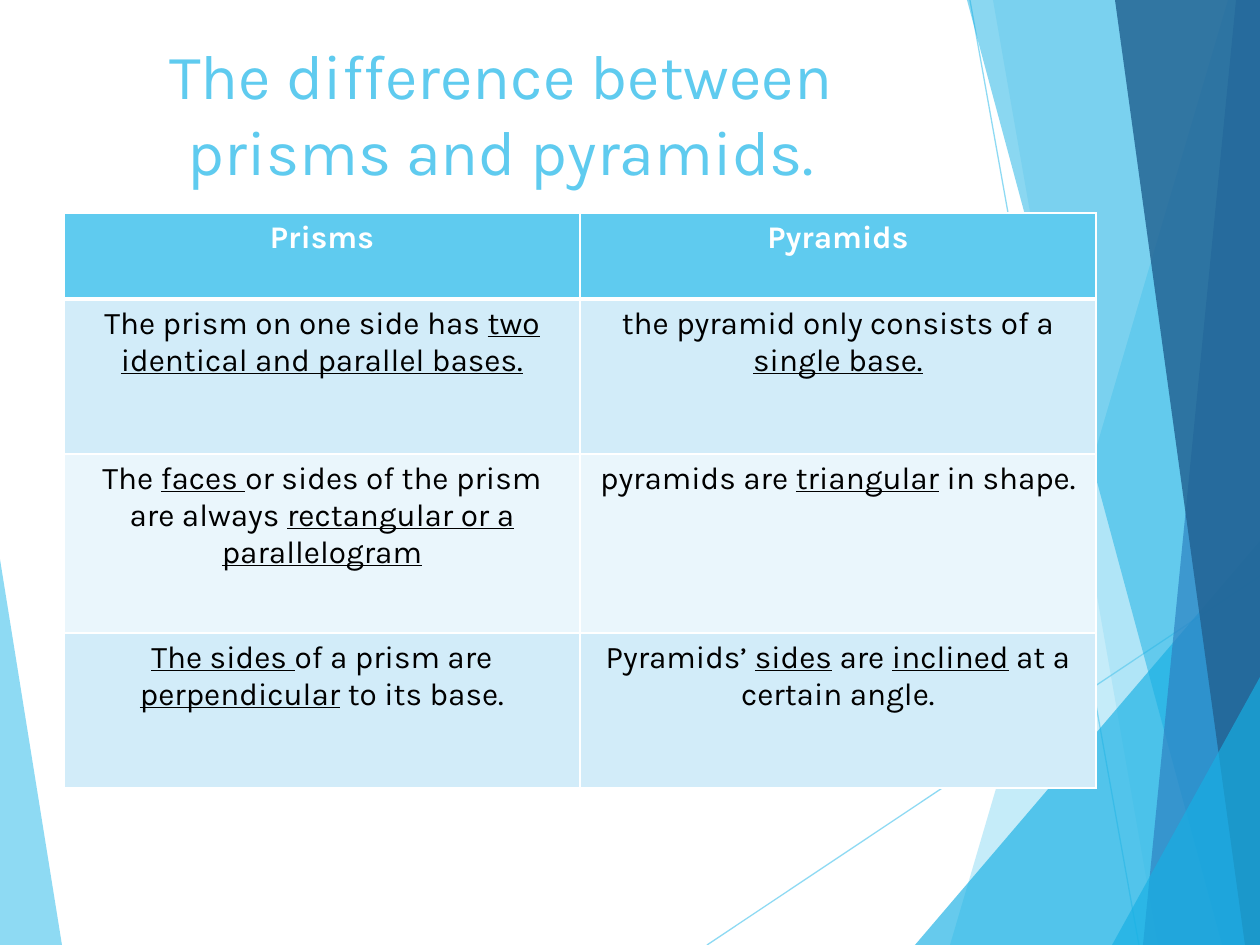
from lxml.etree import SubElement
from pptx import Presentation
from pptx.dml.color import RGBColor
from pptx.enum.shapes import MSO_CONNECTOR
from pptx.enum.text import MSO_ANCHOR, PP_ALIGN
from pptx.oxml.ns import qn
from pptx.util import Pt

SCALE = 914400 / 126
WIDTH, HEIGHT = 1260, 945
COLORS = {
    "sky": "5FCBEF",
    "cyan": "17B0E4",
    "blue": "2E83C3",
    "navy": "226292",
    "band": "D2ECF9",
    "pale": "EAF6FC",
    "white": "FFFFFF",
    "black": "000000",
}

FACETS = [
    ("sky", 36, [(1228, 0), (950, 945), (1260, 945), (1260, 0)]),
    ("sky", 20, [(993, 0), (1158, 945), (1260, 945), (1260, 0)]),
    ("cyan", 66, [(915, 945), (1260, 541), (1260, 945)]),
    ("cyan", 50, [(967, 0), (1222, 945), (1260, 945), (1260, 0)]),
    ("blue", 70, [(1236, 0), (1143, 945), (1260, 945), (1260, 0)]),
    ("navy", 82, [(1115, 0), (1245, 945), (1260, 945), (1260, 0)]),
    ("cyan", 66, [(1112, 945), (1260, 677), (1260, 945)]),
]

HEADER = [[("Prisms", False)], [("Pyramids", False)]]
BODY = [
    [
        [("The prism on one side has ", False), ("two identical and parallel bases.", True)],
        [("the pyramid only consists of a ", False), ("single base.", True)],
    ],
    [
        [
            ("The ", False),
            ("faces ", True),
            ("or sides of the prism are always ", False),
            ("rectangular or a parallelogram", True),
        ],
        [("pyramids are ", False), ("triangular", True), (" in shape.", False)],
    ],
    [
        [
            ("The sides ", True),
            ("of a prism are ", False),
            ("perpendicular", True),
            (" to its base.", False),
        ],
        [
            ("Pyramids’ ", False),
            ("sides", True),
            (" are ", False),
            ("inclined", True),
            (" at a certain angle.", False),
        ],
    ],
]


def px(length):
    return round(length * SCALE)


class SlideBuilder:
    """Draws styled elements on the current slide."""

    font = "Karla"

    def __init__(self, slide):
        self.slide = slide

    def color(self, name):
        return RGBColor.from_string(COLORS[name])

    def set_alpha(self, properties, percent):
        color = next(properties.iter(qn("a:srgbClr")))
        SubElement(color, qn("a:alpha"), val=str(percent * 1000))

    def facet(self, color, opacity, points):
        builder = self.slide.shapes.build_freeform(*points[0], scale=SCALE)
        builder.add_line_segments(points[1:], close=True)
        shape = builder.convert_to_shape()
        shape.shadow.inherit = False
        shape.fill.solid()
        shape.fill.fore_color.rgb = self.color(color)
        shape.line.fill.background()
        self.set_alpha(shape._element.spPr, opacity)

    def line(self, start, end):
        ends = [px(length) for length in (*start, *end)]
        connector = self.slide.shapes.add_connector(MSO_CONNECTOR.STRAIGHT, *ends)
        connector.line.color.rgb = self.color("sky")
        connector.line.width = Pt(0.75)
        properties = connector._element.spPr
        self.set_alpha(properties, 70)
        SubElement(properties, qn("a:effectLst"))

    def add_runs(self, paragraph, runs, size, color, bold=False):
        paragraph.alignment = PP_ALIGN.CENTER
        for text, underline in runs:
            run = paragraph.add_run()
            run.text = text
            run.font.name = self.font
            run.font.size = Pt(size)
            run.font.bold = bold
            run.font.underline = underline
            run.font.color.rgb = self.color(color)

    def title(self, text, left, top, width, height):
        box = self.slide.shapes.add_textbox(px(left), px(top), px(width), px(height))
        frame = box.text_frame
        frame.word_wrap = True
        frame.vertical_anchor = MSO_ANCHOR.MIDDLE
        self.add_runs(frame.paragraphs[0], [(text, False)], 36, "sky")

    def borders(self, cell, top, bottom):
        properties = cell._tc.get_or_add_tcPr()
        widths = {"a:lnL": 1, "a:lnR": 1, "a:lnT": top, "a:lnB": bottom}
        for position, (tag, width) in enumerate(widths.items()):
            border = properties.makeelement(qn(tag), {"w": str(Pt(width))})
            fill = SubElement(border, qn("a:solidFill"))
            SubElement(fill, qn("a:srgbClr"), val=COLORS["white"])
            properties.insert(position, border)

    def table(self, rows, left, top, column_width, heights):
        columns = len(rows[0])
        table = self.slide.shapes.add_table(
            len(rows), columns, px(left), px(top), px(column_width * columns), px(sum(heights))
        ).table
        for column in table.columns:
            column.width = px(column_width)
        for index, (row, height) in enumerate(zip(rows, heights)):
            header = index == 0
            table.rows[index].height = px(height)
            fill = "sky" if header else ("pale", "band")[index % 2]
            for position, runs in enumerate(row):
                cell = table.cell(index, position)
                cell.fill.solid()
                cell.fill.fore_color.rgb = self.color(fill)
                self.borders(cell, 3 if index == 1 else 1, 3 if header else 1)
                text_color = "white" if header else "black"
                self.add_runs(cell.text_frame.paragraphs[0], runs, 18, text_color, header)


def main():
    presentation = Presentation()
    presentation.slide_width, presentation.slide_height = px(WIDTH), px(HEIGHT)
    builder = SlideBuilder(presentation.slides.add_slide(presentation.slide_layouts[6]))

    builder.facet("sky", 70, [(0, 559), (62, 945), (0, 945)])
    builder.line((707, 945), (1260, 576))
    builder.line((970, 0), (1139, 945))
    for facet in FACETS:
        builder.facet(*facet)
    builder.title("The difference between prisms and pyramids.", 64, 21, 874, 182)
    builder.table([HEADER, *BODY], 64, 213, 516, [86, 155, 179, 155])

    presentation.save("out.pptx")


if __name__ == "__main__":
    main()
